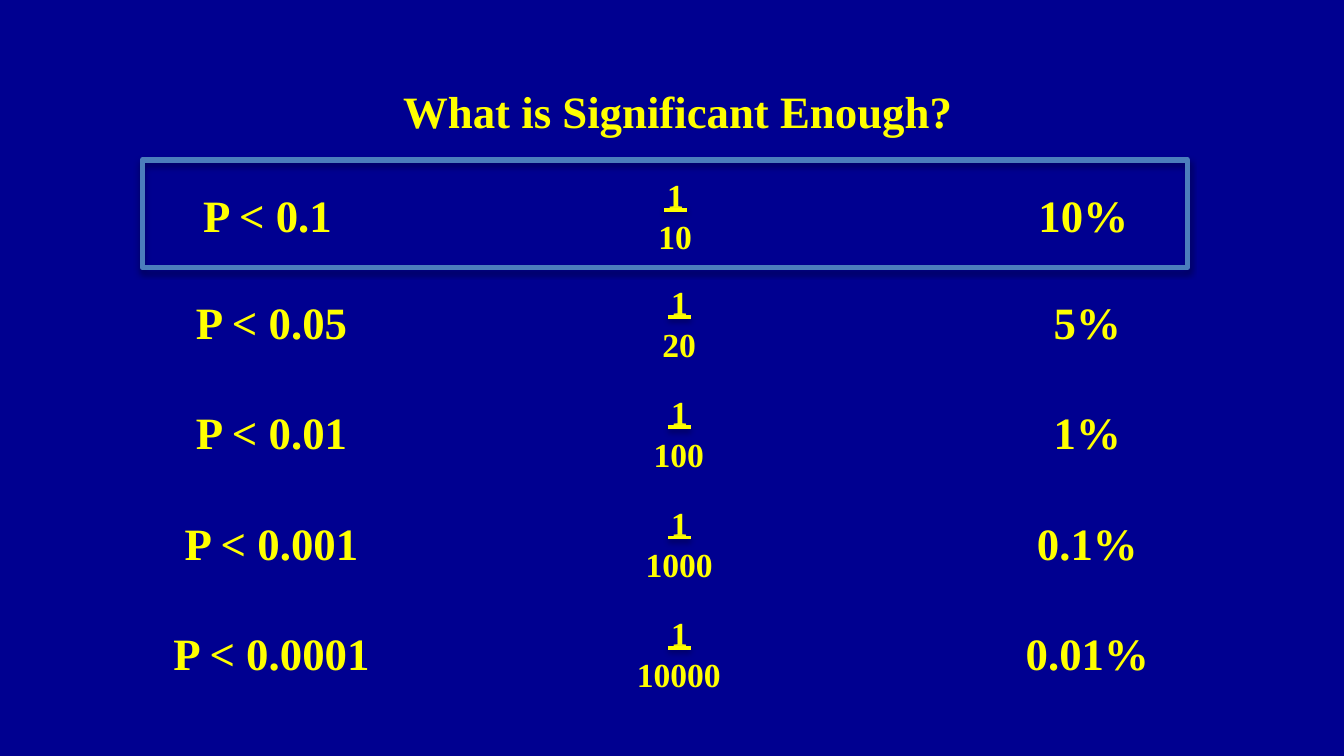
from lxml import etree
from pptx import Presentation
from pptx.dml.color import RGBColor
from pptx.enum.shapes import MSO_CONNECTOR, MSO_SHAPE
from pptx.enum.text import MSO_AUTO_SIZE, PP_ALIGN
from pptx.oxml.ns import qn
from pptx.util import Emu, Pt

STRAIGHT = MSO_CONNECTOR.STRAIGHT
RECTANGLE = MSO_SHAPE.RECTANGLE
CENTER, LEFT = PP_ALIGN.CENTER, PP_ALIGN.LEFT
GROW = MSO_AUTO_SIZE.SHAPE_TO_FIT_TEXT

PX = 4572  # 200 px to the inch
NAVY, YELLOW, BLUE = "000090", "FFFF00", "4B7EBC"
FONT = "Times New Roman"

LEVELS = [
    ("P < 0.1", "10", "10%"),
    ("P < 0.05", "20", "5%"),
    ("P < 0.01", "100", "1%"),
    ("P < 0.001", "1000", "0.1%"),
    ("P < 0.0001", "10000", "0.01%"),
]


def px(length):
    return Emu(length * PX)


def color(hex_string):
    return RGBColor.from_string(hex_string)


def add_text(shapes, text, box, size, align, wrap=True):
    text_box = shapes.add_textbox(*map(px, box))
    frame = text_box.text_frame
    frame.word_wrap = wrap
    frame.auto_size = GROW
    frame.text = text
    paragraph = frame.paragraphs[0]
    paragraph.alignment = align
    if wrap:
        paragraph.line_spacing = 0.95
    font = paragraph.runs[0].font
    font.name, font.size, font.bold = FONT, Pt(size), True
    font.color.rgb = color(YELLOW)
    return text_box


def style_outline(shape, hex_string, width, distance, opacity):
    """Coloured line with a soft black shadow straight below it."""
    shape.line.color.rgb = color(hex_string)
    shape.line.width = Pt(width)
    effects = etree.SubElement(shape._element.spPr, qn("a:effectLst"))
    shadow = etree.SubElement(effects, qn("a:outerShdw"), blurRad="40000",
                              dist=str(distance), dir="5400000", rotWithShape="0")
    black = etree.SubElement(shadow, qn("a:srgbClr"), val="000000")
    etree.SubElement(black, qn("a:alpha"), val=str(opacity * 1000))


def add_title(slide, box):
    title = add_text(slide.shapes, "What is Significant Enough?", box, 24, CENTER)
    title.text_frame.margin_right = px(53)  # sets the heading a little left of centre


def add_fraction(shapes, denominator, center, top):
    for text, offset in (("1", 0), (denominator, 62)):
        width = round(40 + 25.2 * len(text))
        left = center - width // 2
        add_text(shapes, text, (left, top + offset, width, 80), 18, LEFT, wrap=False)
    bar_y = px(top + 62)
    bar = shapes.add_connector(STRAIGHT, px(center - 17), bar_y, px(center + 17), bar_y)
    style_outline(bar, YELLOW, 2, 20000, 38)


def add_level_row(slide, level, left, top):
    label, denominator, percent = level
    shapes = slide.shapes.add_group_shape().shapes
    add_text(shapes, label, (left, top + 25, 396, 98), 24, CENTER)
    add_fraction(shapes, denominator, left + 805, top)
    add_text(shapes, percent, (left + 1214, top + 25, 396, 98), 24, CENTER)


def add_highlight(slide, box):
    frame = slide.shapes.add_shape(RECTANGLE, *map(px, box))
    frame.fill.background()
    style_outline(frame, BLUE, 3, 23000, 35)


def main():
    presentation = Presentation()
    presentation.slide_width, presentation.slide_height = px(2000), px(1125)
    slide = presentation.slides.add_slide(presentation.slide_layouts[6])
    slide.background.fill.solid()
    slide.background.fill.fore_color.rgb = color(NAVY)

    add_title(slide, (250, 120, 1550, 174))

    # Evenly spaced levels; the highlighted first one sits slightly apart
    for index, level in enumerate(LEVELS[1:]):
        add_level_row(slide, level, 206, 410 + 164 * index)
    add_level_row(slide, LEVELS[0], 200, 250)
    add_highlight(slide, (212, 238, 1555, 160))

    presentation.save("out.pptx")


if __name__ == "__main__":
    main()
